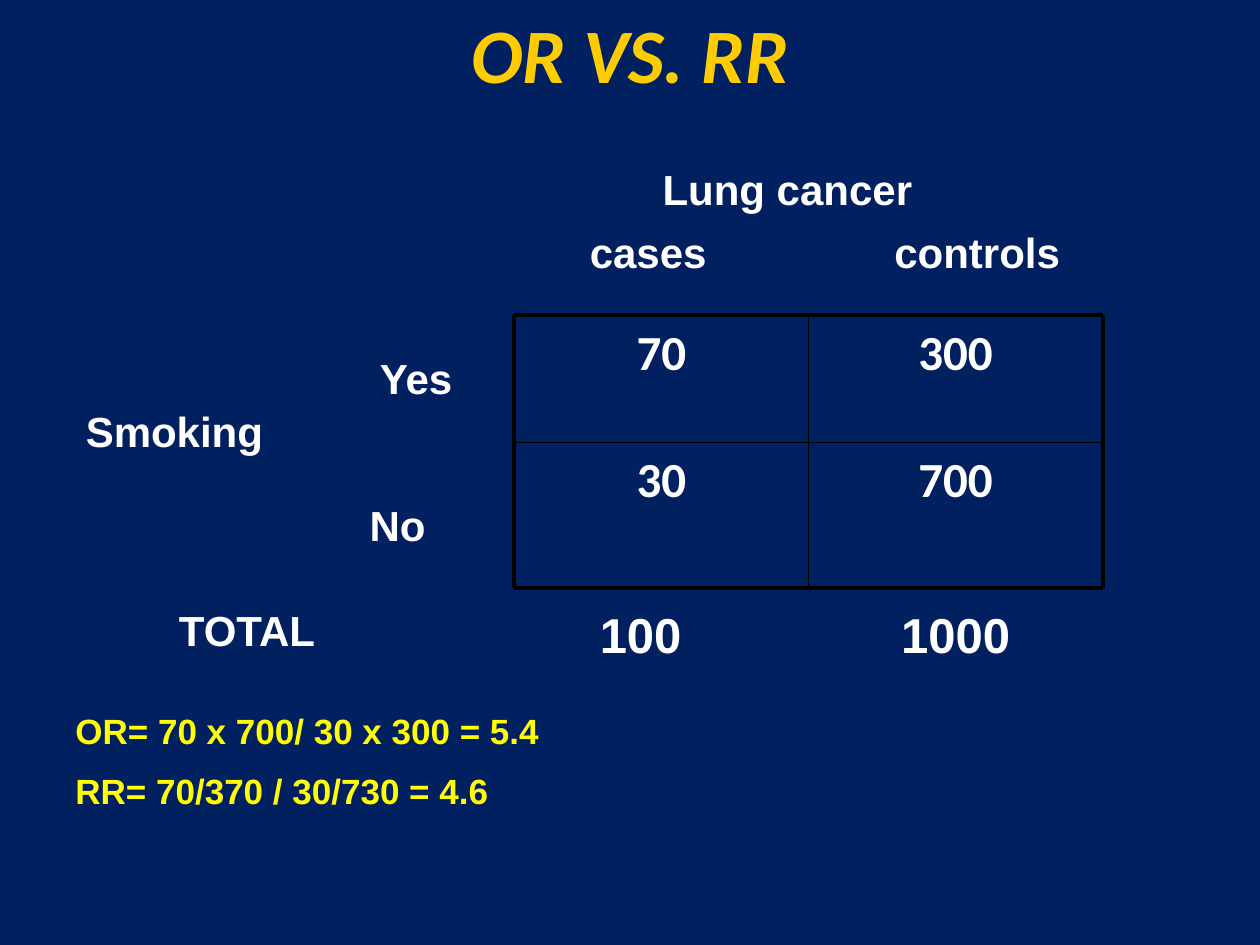
import pptx
import pptx.dml.color
import pptx.enum.shapes
import pptx.enum.text
import pptx.oxml.ns
import pptx.util
from lxml import etree

Cm, Pt = pptx.util.Cm, pptx.util.Pt
ALIGN = pptx.enum.text.PP_ALIGN
ANCHOR = pptx.enum.text.MSO_ANCHOR
STRAIGHT = pptx.enum.shapes.MSO_CONNECTOR.STRAIGHT
LEFT, CENTER = ALIGN.LEFT, ALIGN.CENTER
NAVY, WHITE, YELLOW, GOLD, BLACK = "002060", "FFFFFF", "FFFF00", "FFCC00", "000000"

# Content: text, (left, top, width, height) in cm, size, alignment
TITLE = "OR VS. RR"
COUNTS = [["70", "300"], ["30", "700"]]
LABELS = [
    ("Lung cancer", (12.91, 3.18, 5.93, 1.27), 24, CENTER),
    ("Smoking", (1.48, 8.04, 5.08, 1.27), 24, LEFT),
    ("Yes", (7.41, 6.99, 2.12, 1.27), 24, LEFT),
    ("No", (7.2, 9.95, 2.12, 1.27), 24, LEFT),
    ("cases", (11.64, 4.45, 4.02, 1.27), 24, LEFT),
    ("controls", (17.78, 4.45, 4.02, 1.27), 24, LEFT),
    ("100", (10.8, 12.07, 4.23, 1.45), 28, CENTER),
    ("1000", (17.15, 12.07, 4.23, 1.45), 28, CENTER),
    ("TOTAL", (2.12, 12.07, 5.72, 1.27), 24, CENTER),
]
RESULTS = ["OR= 70 x 700/ 30 x 300 = 5.4", "RR= 70/370 / 30/730 = 4.6"]

# Grid line positions in cm, and line widths in points
XS = [10.37, 16.3, 22.23]
YS = [6.35, 8.92, 11.85]
OUTER, INNER = 2.25, 1


def rgb(value):
    return pptx.dml.color.RGBColor.from_string(value)


def write(p, text, size, color=WHITE, font="Arial", align=LEFT, italic=False):
    p.alignment = align
    r = p.add_run()
    r.text = text
    r.font.name, r.font.size = font, Pt(size)
    r.font.bold, r.font.italic = True, italic
    r.font.color.rgb = rgb(color)


def add_box(s, box):
    tf = s.shapes.add_textbox(*map(Cm, box)).text_frame
    tf.word_wrap = True
    return tf


def add_line(s, x1, y1, x2, y2, width):
    line = s.shapes.add_connector(STRAIGHT, Cm(x1), Cm(y1), Cm(x2), Cm(y2))
    line.line.color.rgb = rgb(BLACK)
    line.line.width = Pt(width)
    etree.SubElement(line._element.spPr, pptx.oxml.ns.qn("a:effectLst"))


prs = pptx.Presentation()
prs.slide_width, prs.slide_height = Cm(25.4), Cm(19.05)
s = prs.slides.add_slide(prs.slide_layouts[6])
s.background.fill.solid()
s.background.fill.fore_color.rgb = rgb(NAVY)

# Counts in the two-by-two grid
for i, row in enumerate(COUNTS):
    for j, count in enumerate(row):
        tf = add_box(s, (XS[j], YS[i], XS[j + 1] - XS[j], YS[i + 1] - YS[i]))
        write(tf.paragraphs[0], count, 28, font="Calibri", align=CENTER)

# Grid lines, thicker around the outside
for y in YS:
    add_line(s, XS[0], y, XS[-1], y, OUTER if y in (YS[0], YS[-1]) else INNER)
for x in XS:
    add_line(s, x, YS[0], x, YS[-1], OUTER if x in (XS[0], XS[-1]) else INNER)

# Row, column and total labels
for text, box, size, align in LABELS:
    write(add_box(s, box).paragraphs[0], text, size, align=align)

# Odds ratio and relative risk
tf = add_box(s, (1.27, 14.18, 13.54, 2.36))
for i, text in enumerate(RESULTS):
    p = tf.add_paragraph() if i else tf.paragraphs[0]
    if i:
        p.space_before = Pt(10)
    write(p, text, 20, YELLOW)

# Title
tf = add_box(s, (1.27, 0, 22.86, 2.11))
tf.vertical_anchor = ANCHOR.MIDDLE
write(tf.paragraphs[0], TITLE, 44, GOLD, "Calibri", CENTER, italic=True)

prs.save("out.pptx")
